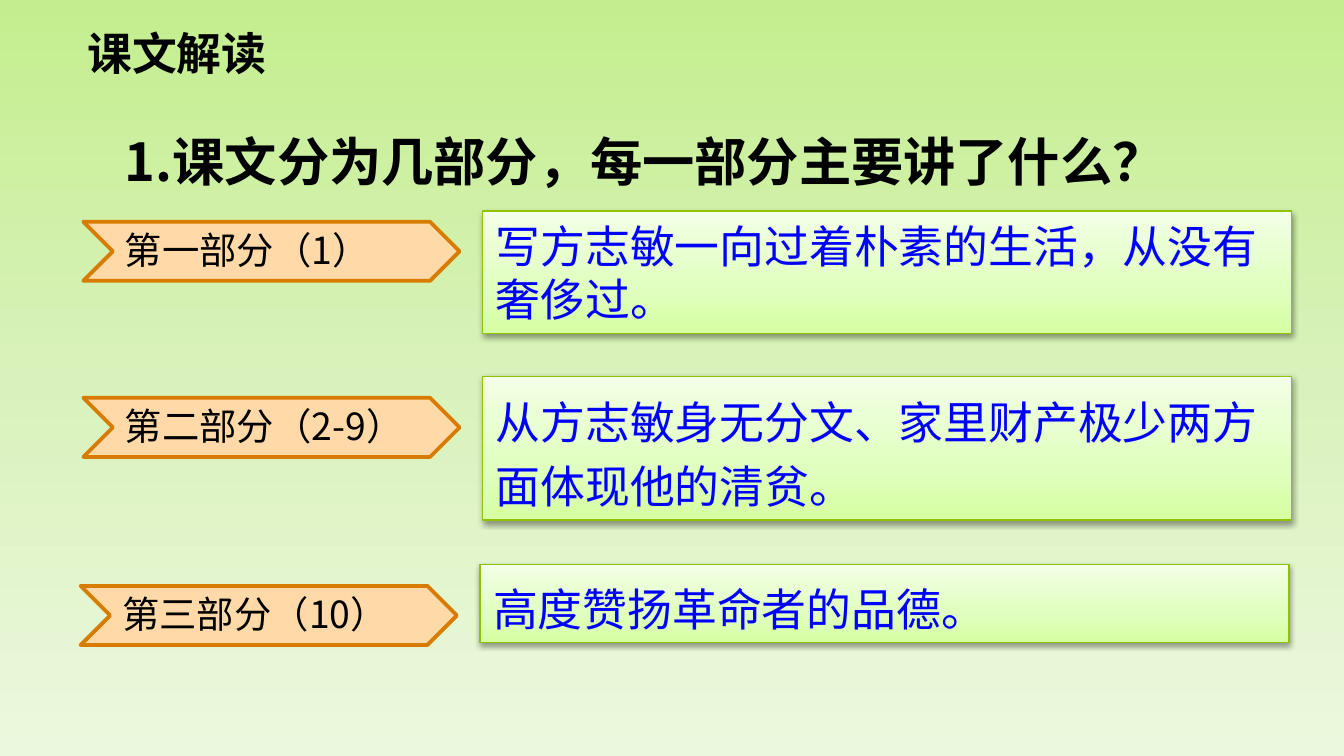
from lxml import etree
from pptx import Presentation, util as u
from pptx.dml.color import RGBColor
from pptx.enum import shapes, text
from pptx.oxml.ns import qn

HEADING = "课文解读"
QUESTION = "1.课文分为几部分，每一部分主要讲了什么？"
# label, summary, left shift, arrow top, box top, box height, box line spacing
PARTS = [
    ("第一部分（1）", "写方志敏一向过着朴素的生活，从没有奢侈过。", 0, 1.65, 1.57, 0.91, 1.0),
    ("第二部分（2-9）", "从方志敏身无分文、家里财产极少两方面体现他的清贫。", 0, 2.96, 2.8, 1.07, 1.2),
    ("第三部分（10）", "高度赞扬革命者的品德。", -0.02, 4.36, 4.2, 0.58, 1.2),
]
SKY = [(0, "C4EE8E"), (50, "D9F2BB"), (100, "ECF8DE")]
LEAF = [(0, "D5FFA2"), (35, "E0FFBE"), (100, "F3FFE6")]
CJK = "Noto Sans CJK SC"
HEADING_FORMAT = {"size": u.Pt(24), "name": "Calibri", "bold": True}
QUESTION_FORMAT = {"size": u.Pt(28), "name": CJK, "bold": True}
LABEL_FORMAT = {"size": u.Pt(20), "name": CJK}
SUMMARY_FORMAT = {"size": u.Pt(24), "name": "Arial"}


def color(value):
    """Turn a hex string into a colour."""
    return RGBColor.from_string(value)


def place(left, top, width, height):
    """Give a frame in inches as slide lengths."""
    return [u.Inches(n) for n in (left, top, width, height)]


def add_node(parent, tag, **values):
    """Append a drawing element with attributes."""
    return etree.SubElement(parent, qn("a:" + tag), {k: str(v) for k, v in values.items()})


def paint_gradient(fill, element, stops, angle):
    """Fill with a linear gradient of any number of stops."""
    fill.gradient()
    fill.gradient_angle = angle
    stop_list = next(element.iter(qn("a:gsLst")))
    for old in list(stop_list):
        stop_list.remove(old)
    for share, value in stops:
        add_node(add_node(stop_list, "gs", pos=share * 1000), "srgbClr", val=value)


def write(box, words, font, ink="000000", anchor=text.MSO_ANCHOR.TOP, margin=None, **spacing):
    """Put one formatted paragraph in a box."""
    frame = box.text_frame
    frame.word_wrap = True
    frame.auto_size = text.MSO_AUTO_SIZE.SHAPE_TO_FIT_TEXT
    frame.vertical_anchor = anchor
    if margin:
        frame.margin_left = frame.margin_right = u.Inches(margin[0])
        frame.margin_top = frame.margin_bottom = u.Inches(margin[1])
    para = frame.paragraphs[0]
    para.alignment = text.PP_ALIGN.LEFT
    for key, value in spacing.items():
        setattr(para, key, value)
    span = para.add_run()
    span.text = words
    for key, value in font.items():
        setattr(span.font, key, value)
    span.font.color.rgb = color(ink)
    add_node(span.font._element, "ea", typeface=CJK)


def add_block(page, kind, frame, line, weight):
    """Add an outlined preset shape without the theme shadow."""
    block = page.shapes.add_shape(kind, *place(*frame))
    block.shadow.inherit = False
    block.line.color.rgb = color(line)
    block.line.width = u.Pt(weight)
    return block


def add_part(page, label, summary, shift, arrow_top, box_top, box_height, leading):
    """Add one arrow label with its summary box."""
    arrow = add_block(page, shapes.MSO_SHAPE.CHEVRON, (0.62 + shift, arrow_top, 2.8, 0.44), "D77C01", 2)
    arrow.fill.solid()
    arrow.fill.fore_color.rgb = color("FFD9A7")
    caption = page.shapes.add_textbox(*place(0.83 + shift, arrow_top - 0.11, 2.76, 0.54))
    write(caption, label, LABEL_FORMAT, line_spacing=1.3, space_before=u.Pt(6))

    box = add_block(page, shapes.MSO_SHAPE.RECTANGLE, (3.59 + shift, box_top, 6.02, box_height), "91C200", 0.75)
    paint_gradient(box.fill, box.element, LEAF, 90)
    effects = next(box.element.iter(qn("a:effectLst")))
    shadow = add_node(effects, "outerShdw", blurRad=u.Pt(3.1), dist=u.Pt(1.6), dir=5400000, rotWithShape=0)
    add_node(add_node(shadow, "srgbClr", val="000000"), "alpha", val=38000)
    write(box, summary, SUMMARY_FORMAT, "0000FF", text.MSO_ANCHOR.MIDDLE, line_spacing=leading)


def main():
    """Build the slide."""
    deck = Presentation()
    deck.slide_width = u.Inches(10)
    deck.slide_height = deck.slide_width * 9 // 16
    page = deck.slides.add_slide(deck.slide_layouts[5])
    paint_gradient(page.background.fill, page.element, SKY, 270)

    title = page.shapes.title
    title.left, title.top, title.width, title.height = place(0.55, 0.14, 1.64, 0.5)
    write(title, HEADING, HEADING_FORMAT)
    question = page.shapes.add_textbox(*place(0.86, 0.69, 8.75, 0.78))
    write(question, QUESTION, QUESTION_FORMAT, margin=(0.07, 0.04), line_spacing=1.5, space_before=u.Pt(18))
    for part in PARTS:
        add_part(page, *part)
    deck.save("out.pptx")


if __name__ == "__main__":
    main()
